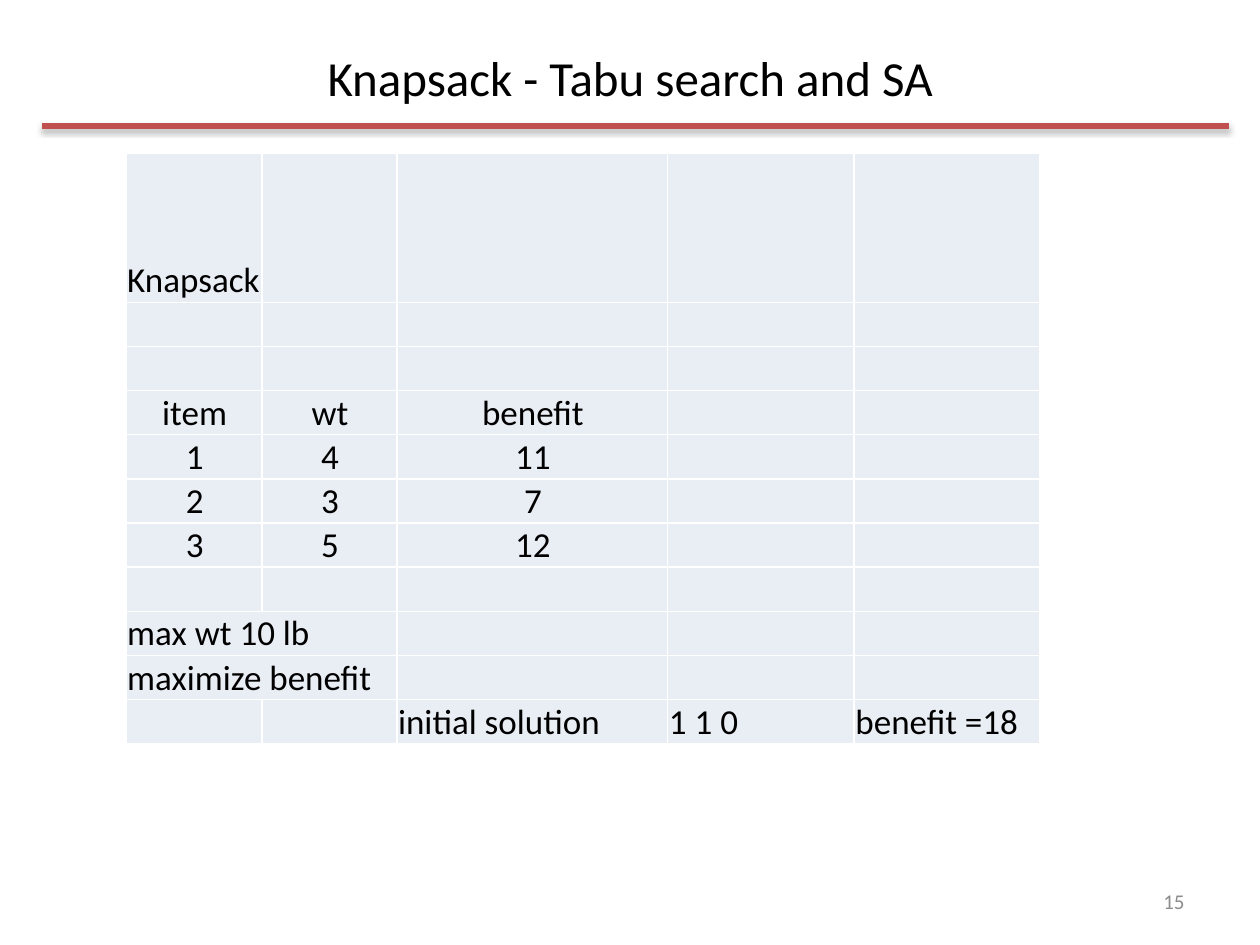
"""Build the knapsack slide with its item table."""
import pptx
import pptx.dml.color
import pptx.enum.shapes
import pptx.enum.text
import pptx.oxml
import pptx.oxml.ns
import pptx.util

Inches = pptx.util.Inches
ALIGN = pptx.enum.text.PP_ALIGN
ANCHOR = pptx.enum.text.MSO_ANCHOR
NAMESPACE = pptx.oxml.ns.nsdecls("a")


def color(value):
    return pptx.dml.color.RGBColor.from_string(value)


def write(frame, text, size=20, fill="000000", align=ALIGN.LEFT, anchor=ANCHOR.MIDDLE):
    frame.word_wrap = True
    frame.vertical_anchor = anchor
    para = frame.paragraphs[0]
    para.alignment = align
    span = para.add_run()
    span.text = text
    span.font.size = pptx.util.Pt(size)
    span.font.name = "Calibri"
    span.font.color.rgb = color(fill)


deck = pptx.Presentation()
deck.slide_width, deck.slide_height = Inches(10), Inches(7.5)
page = deck.slides.add_slide(deck.slide_layouts[5])

title = page.shapes.title
title.left, title.top, title.width, title.height = map(Inches, (0.5, 0.3, 9, 0.62))
write(title.text_frame, "Knapsack - Tabu search and SA", size=28, align=ALIGN.CENTER)

rule = page.shapes.add_connector(
    pptx.enum.shapes.MSO_CONNECTOR.STRAIGHT, Inches(0.33), Inches(1), Inches(9.75), Inches(1))
rule.line.color.rgb = color("C0504D")
rule.line.width = pptx.util.Pt(3)
rule._element.spPr.append(pptx.oxml.parse_xml(
    f'<a:effectLst {NAMESPACE}><a:outerShdw blurRad="40000" dist="23000" dir="5400000" rotWithShape="0">'
    '<a:srgbClr val="000000"><a:alpha val="35000"/></a:srgbClr></a:outerShdw></a:effectLst>'))

rows = [
    ["Knapsack"],
    [],
    [],
    ["item", "wt", "benefit"],
    ["1", "4", "11"],
    ["2", "3", "7"],
    ["3", "5", "12"],
    [],
    ["max wt 10 lb"],
    ["maximize benefit"],
    ["", "", "initial solution", "1 1 0", "benefit =18"],
]
widths = [1.08, 1.07, 2.15, 1.48, 1.47]
centered_rows = range(3, 7)
merged_rows = (8, 9)

table = page.shapes.add_table(
    len(rows), len(widths), Inches(1), Inches(1.22), Inches(7.25), Inches(4.68)).table
table.first_row = False
table.horz_banding = False
for column, width in zip(table.columns, widths):
    column.width = Inches(width)
for number, row in enumerate(table.rows):
    row.height = Inches(0.35 if number else 1.18)

for number, texts in enumerate(rows):
    for position in range(len(widths)):
        cell = table.cell(number, position)
        cell.margin_left = cell.margin_top = Inches(0.01)
        cell.margin_right = cell.margin_bottom = 0
        cell.vertical_anchor = ANCHOR.BOTTOM
        properties = cell._tc.get_or_add_tcPr()
        for side in ("lnL", "lnR", "lnT", "lnB"):
            properties.append(pptx.oxml.parse_xml(
                f'<a:{side} {NAMESPACE} w="12700"><a:solidFill>'
                f'<a:srgbClr val="FFFFFF"/></a:solidFill></a:{side}>'))
        cell.fill.solid()
        cell.fill.fore_color.rgb = color("E9EDF4")
        if position < len(texts) and texts[position]:
            align = ALIGN.CENTER if number in centered_rows else ALIGN.LEFT
            write(cell.text_frame, texts[position], align=align, anchor=ANCHOR.BOTTOM)
for number in merged_rows:
    table.cell(number, 0).merge(table.cell(number, 1))

page_number = page.shapes.add_textbox(Inches(7.17), Inches(6.95), Inches(2.33), Inches(0.4))
write(page_number.text_frame, "15", size=12, fill="8C8C8C", align=ALIGN.RIGHT)

deck.save("out.pptx")
